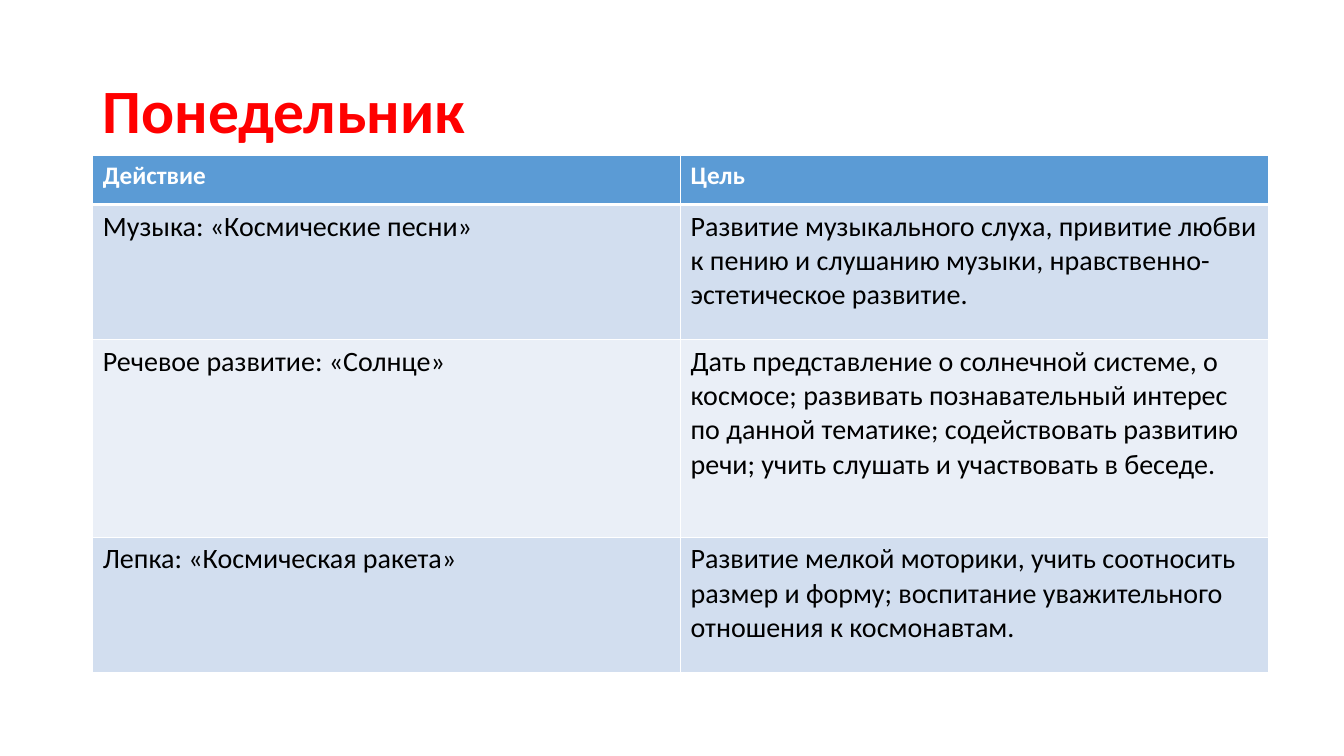
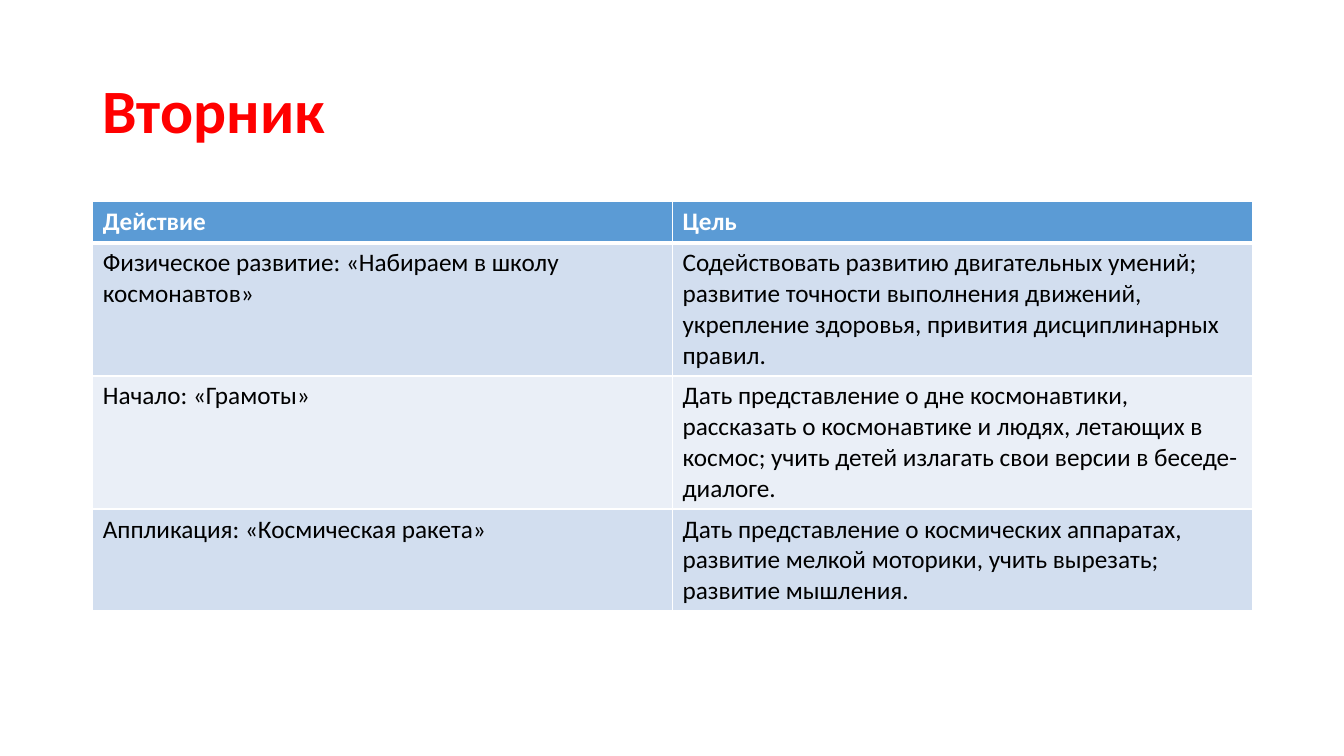
"""Builds two weekday plan slides, each with a title and a table of activities."""
from lxml import etree
from pptx import Presentation
from pptx.dml.color import RGBColor
from pptx.enum.text import MSO_ANCHOR
from pptx.oxml.ns import qn
from pptx.util import Inches, Pt

MIDDLE = MSO_ANCHOR.MIDDLE
FONT = "Calibri"
COLORS = {
    "title": "FF0000",
    "head": "5B9BD5",
    "odd": "D2DEEF",
    "even": "EAEFF7",
    "white": "FFFFFF",
    "text": "000000",
}
LEFT = 0.92
HEADS = ("Действие", "Цель")

DAYS = [
    {
        "title": "Понедельник",
        "top": 1.54,
        "width": 11.66,
        "size": 20,
        "heights": (0.49, 1.34, 1.96, 1.34),
        "rows": [
            ("Музыка: «Космические песни»",
             "Развитие музыкального слуха, привитие любви к пению и слушанию "
             "музыки, нравственно-эстетическое развитие."),
            ("Речевое развитие: «Солнце»",
             "Дать представление о солнечной системе, о космосе; развивать "
             "познавательный интерес по данной тематике; содействовать "
             "развитию речи; учить слушать и участвовать в беседе."),
            ("Лепка: «Космическая ракета»",
             "Развитие мелкой моторики, учить соотносить размер и форму; "
             "воспитание уважительного отношения к космонавтам."),
        ],
    },
    {
        "title": "Вторник",
        "top": 2,
        "width": 11.5,
        "size": 18,
        "heights": (0.41, 1.32, 1.32, 1.01),
        "rows": [
            ("Физическое развитие: «Набираем в школу космонавтов»",
             "Содействовать развитию двигательных умений; развитие точности "
             "выполнения движений, укрепление здоровья, привития "
             "дисциплинарных правил."),
            ("Начало: «Грамоты»",
             "Дать представление о дне космонавтики, рассказать о "
             "космонавтике и людях, летающих в космос; учить детей излагать "
             "свои версии в беседе-диалоге."),
            ("Аппликация: «Космическая ракета»",
             "Дать представление о космических аппаратах, развитие мелкой "
             "моторики, учить вырезать; развитие мышления."),
        ],
    },
]


def write(frame, text, size, color, bold=False, spacing=None):
    frame.word_wrap = True
    para = frame.paragraphs[0]
    para.line_spacing = spacing
    run = para.add_run()
    run.text = text
    run.font.name = FONT
    run.font.size = Pt(size)
    run.font.bold = bold
    run.font.color.rgb = RGBColor.from_string(COLORS[color])


def edge(cell, **widths):
    props = cell._tc.get_or_add_tcPr()
    for spot, side in enumerate("LRTB"):
        line = etree.Element(qn("a:ln" + side), w=str(Pt(widths.get(side, 1))))
        fill = etree.SubElement(line, qn("a:solidFill"))
        etree.SubElement(fill, qn("a:srgbClr"), val=COLORS["white"])
        props.insert(spot, line)


deck = Presentation()
deck.slide_width = Inches(13.33)
deck.slide_height = Inches(7.5)
blank = deck.slide_layouts[6]

for day in DAYS:
    slide = deck.slides.add_slide(blank)
    title = slide.shapes.add_textbox(
        Inches(LEFT), Inches(0.4), Inches(11.5), Inches(1.45))
    title.text_frame.vertical_anchor = MIDDLE
    write(title.text_frame, day["title"], size=44, color="title", bold=True, spacing=0.9)

    rows = [HEADS] + day["rows"]
    table = slide.shapes.add_table(
        len(rows), len(HEADS), Inches(LEFT), Inches(day["top"]),
        Inches(day["width"]), Inches(sum(day["heights"]))).table
    for r, texts in enumerate(rows):
        table.rows[r].height = Inches(day["heights"][r])
        head = r == 0
        band = "head" if head else "odd" if r % 2 else "even"
        for c, text in enumerate(texts):
            cell = table.cell(r, c)
            cell.fill.solid()
            cell.fill.fore_color.rgb = RGBColor.from_string(COLORS[band])
            edge(cell, T=3 if r == 1 else 1, B=3 if head else 1)
            write(cell.text_frame, text, size=18 if head else day["size"],
                  color="white" if head else "text", bold=head)

deck.save("out.pptx")
